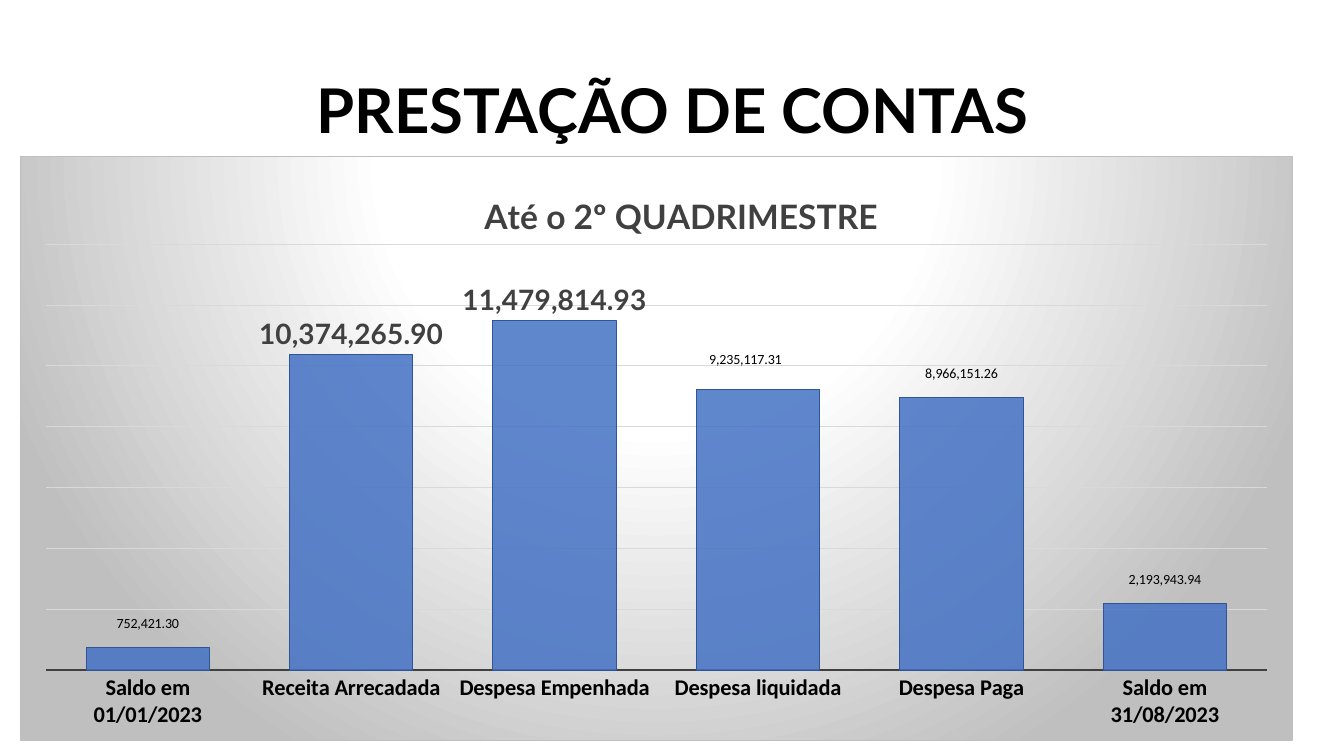
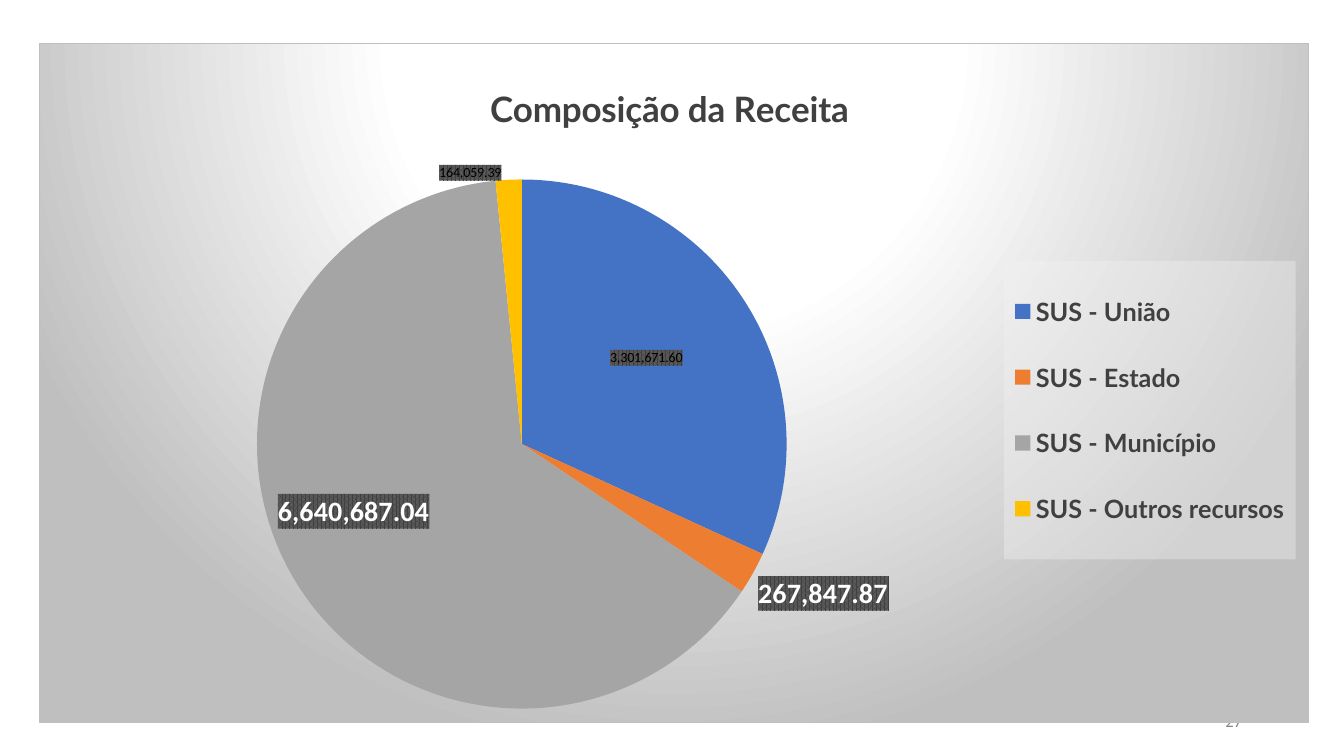
from copy import deepcopy

from lxml.etree import SubElement
from pptx import Presentation
from pptx.chart.data import CategoryChartData
from pptx.dml.color import RGBColor
from pptx.enum.chart import XL_CHART_TYPE, XL_LABEL_POSITION, XL_LEGEND_POSITION, XL_TICK_MARK
from pptx.enum.text import MSO_ANCHOR, PP_ALIGN
from pptx.oxml import parse_xml
from pptx.oxml.ns import nsdecls, qn
from pptx.util import Inches, Pt

INK, GREY, BLUE = "404040", "BFBFBF", "4472C4"
HEADING_FONT, BODY_FONT = "Lato", "Calibri"
MONEY = "#,##0.00"

PANEL = f"""<c:spPr {nsdecls('c', 'a')}>
  <a:gradFill rotWithShape="1">
    <a:gsLst>
      <a:gs pos="0"><a:srgbClr val="FFFFFF"/></a:gs>
      <a:gs pos="39000"><a:srgbClr val="FFFFFF"/></a:gs>
      <a:gs pos="100000"><a:srgbClr val="{GREY}"/></a:gs>
    </a:gsLst>
    <a:path path="circle"><a:fillToRect l="50000" t="-80000" r="50000" b="180000"/></a:path>
  </a:gradFill>
  <a:ln w="9525"><a:solidFill><a:srgbClr val="{GREY}"/></a:solidFill></a:ln>
</c:spPr>"""

LEGEND_PANEL = f"""<c:spPr {nsdecls('c', 'a')}>
  <a:solidFill><a:srgbClr val="F2F2F2"><a:alpha val="39000"/></a:srgbClr></a:solidFill>
</c:spPr>"""

LABEL_PANEL = f"""<c:spPr {nsdecls('c', 'a')}>
  <a:pattFill prst="pct75">
    <a:fgClr><a:srgbClr val="{INK}"/></a:fgClr><a:bgClr><a:srgbClr val="595959"/></a:bgClr>
  </a:pattFill>
</c:spPr>"""


def style(font, size, color, name, bold=True):
    font.size, font.bold, font.name = Pt(size), bold, name
    font.color.rgb = RGBColor.from_string(color)


def place(parent, after, **shares):
    """Give a chart part a manual layout, in shares of the chart's size."""
    for automatic in parent.findall(qn("c:layout")):
        parent.remove(automatic)
    layout = parent.makeelement(qn("c:layout"))
    manual = SubElement(layout, qn("c:manualLayout"))
    for tag, value in shares.items():
        SubElement(manual, qn(f"c:{tag}")).set("val", str(value))
    previous = parent.find(qn(after)) if after else None
    parent.insert(0 if previous is None else parent.index(previous) + 1, layout)


prs = Presentation()
prs.slide_width, prs.slide_height = Inches(13.33), Inches(7.5)

# Slide 1: title; slide 2: page number, partly under the chart
accounts = prs.slides.add_slide(prs.slide_layouts[5])
heading = accounts.shapes.title
heading.left, heading.top, heading.width, heading.height = map(Inches, (0.92, 0.4, 11.5, 1.45))
heading.text_frame.vertical_anchor = MSO_ANCHOR.MIDDLE
heading_line = heading.text_frame.paragraphs[0]
heading_line.alignment, heading_line.line_spacing = PP_ALIGN.CENTER, 0.9
heading_run = heading_line.add_run()
heading_run.text = "PRESTAÇÃO DE CONTAS"
style(heading_run.font, 44, "000000", HEADING_FONT)

revenue = prs.slides.add_slide(prs.slide_layouts[6])
page = revenue.shapes.add_textbox(*map(Inches, (9.42, 6.95, 3, 0.4))).text_frame
page.word_wrap, page.vertical_anchor = True, MSO_ANCHOR.MIDDLE
page.paragraphs[0].alignment = PP_ALIGN.RIGHT
page_run = page.paragraphs[0].add_run()
page_run.text = "27"
style(page_run.font, 12, "898989", BODY_FONT, bold=False)

# Both charts: data, panel, title, plot area and value labels
# label_shifts: point index -> share of the chart moved from the usual label place
charts = []
for plan in (
    dict(slide=accounts, kind=XL_CHART_TYPE.COLUMN_CLUSTERED, box=(0.2, 1.55, 12.62, 5.8),
         title="Até o 2º QUADRIMESTRE", title_size=24, title_left=0.36,
         plot=dict(x=0.02, y=0.15, w=0.96, h=0.73),
         amounts={"Saldo em 01/01/2023": 752421.30, "Receita Arrecadada": 10374265.90,
                  "Despesa Empenhada": 11479814.93, "Despesa liquidada": 9235117.31,
                  "Despesa Paga": 8966151.26, "Saldo em 31/08/2023": 2193943.94},
         label_color=INK, label_font=HEADING_FONT, label_panel=None,
         label_position=XL_LABEL_POSITION.OUTSIDE_END,
         label_shifts={0: (0, -0.02), 3: (-0.01, -0.03), 4: (0, -0.02), 5: (0, -0.02)}),
    dict(slide=revenue, kind=XL_CHART_TYPE.PIE, box=(0.39, 0.43, 12.59, 6.74),
         title="Composição da Receita", title_size=25, title_left=0.35,
         plot=dict(x=0.17, y=0.2, w=0.42, h=0.78),
         amounts={"SUS - União": 3301671.60, "SUS - Estado": 267847.87,
                  "SUS - Município": 6640687.04, "SUS - Outros recursos": 164059.39},
         label_color="FFFFFF", label_font=BODY_FONT, label_panel=LABEL_PANEL,
         label_position=XL_LABEL_POSITION.BEST_FIT,
         label_shifts={0: (-0.11, 0.1), 3: (-0.03, 0.01)}),
):
    data = CategoryChartData(number_format=MONEY)
    data.categories = plan["amounts"].keys()
    data.add_series("Series 1", plan["amounts"].values())
    chart = plan["slide"].shapes.add_chart(plan["kind"], *map(Inches, plan["box"]), data).chart
    charts.append(chart)
    style(chart.font, 10, "000000", BODY_FONT, bold=False)
    chart.has_legend = False
    space = chart.element.find(qn("c:chart"))
    space.addnext(parse_xml(PANEL))

    title_run = chart.chart_title.text_frame.paragraphs[0].add_run()
    title_run.text = plan["title"]
    style(title_run.font, plan["title_size"], INK, HEADING_FONT)
    place(space.find(qn("c:title")), "c:tx", xMode="edge", yMode="edge", x=plan["title_left"], y=0.05)
    place(space.find(qn("c:plotArea")), None, layoutTarget="inner", xMode="edge", yMode="edge", **plan["plot"])

    series = chart.plots[0].series[0]
    labels = series.data_labels
    labels.show_value = True
    labels.number_format, labels.number_format_is_linked = MONEY, False
    labels.position = plan["label_position"]
    style(labels.font, 20, plan["label_color"], plan["label_font"])
    group = series.data_labels._element
    for leader_lines in group.findall(qn("c:showLeaderLines")):
        leader_lines.set("val", "0")
    if plan["label_panel"]:
        group.find(qn("c:numFmt")).addnext(parse_xml(plan["label_panel"]))
    shared = [part for tag in ("c:numFmt", "c:spPr", "c:txPr") for part in group.findall(qn(tag))]
    for index, (dx, dy) in plan["label_shifts"].items():
        series.points[index].data_label.position = plan["label_position"]
        label = next(item for item in group.findall(qn("c:dLbl"))
                     if item.find(qn("c:idx")).get("val") == str(index))
        place(label, "c:idx", x=dx, y=dy)
        for offset, part in enumerate(shared, 2):
            label.insert(offset, deepcopy(part))

columns, pie = charts

# Columns: translucent bars, hidden value axis
bars = columns.plots[0]
bars.gap_width, bars.vary_by_categories = 65, False
bar_format = bars.series[0].format
bar_format.fill.solid()
bar_format.fill.fore_color.rgb = RGBColor.from_string(BLUE)
bar_color = bars.series[0]._element.find(qn("c:spPr")).find(qn("a:solidFill")).find(qn("a:srgbClr"))
SubElement(bar_color, qn("a:alpha")).set("val", "85000")
bar_format.line.color.rgb = RGBColor.from_string("2F5597")
bar_format.line.width = Pt(0.75)

amount_axis = columns.value_axis
amount_axis.visible = False
amount_axis.minimum_scale, amount_axis.maximum_scale, amount_axis.major_unit = 0, 14000000, 2000000
gridline = amount_axis.major_gridlines.format.line
gridline.color.rgb, gridline.width = RGBColor.from_string("D9D9D9"), Pt(0.75)
item_axis = columns.category_axis
item_axis.major_tick_mark = item_axis.minor_tick_mark = XL_TICK_MARK.NONE
style(item_axis.tick_labels.font, 16, "000000", BODY_FONT)
item_axis.format.line.color.rgb = RGBColor.from_string(INK)
item_axis.format.line.width = Pt(1.5)

# Pie: one colour a source, legend on a pale panel
pie.plots[0].vary_by_categories = True
for index, color in enumerate((BLUE, "ED7D31", "A5A5A5", "FFC000")):
    slice_fill = pie.plots[0].series[0].points[index].format.fill
    slice_fill.solid()
    slice_fill.fore_color.rgb = RGBColor.from_string(color)
pie.has_legend = True
pie.legend.position, pie.legend.include_in_layout = XL_LEGEND_POSITION.RIGHT, False
style(pie.legend.font, 18, INK, HEADING_FONT)
legend = pie.element.find(qn("c:chart")).find(qn("c:legend"))
place(legend, "c:legendPos", xMode="edge", yMode="edge", x=0.76, y=0.32, w=0.23, h=0.44)
legend.find(qn("c:overlay")).addnext(parse_xml(LEGEND_PANEL))

prs.save("out.pptx")
